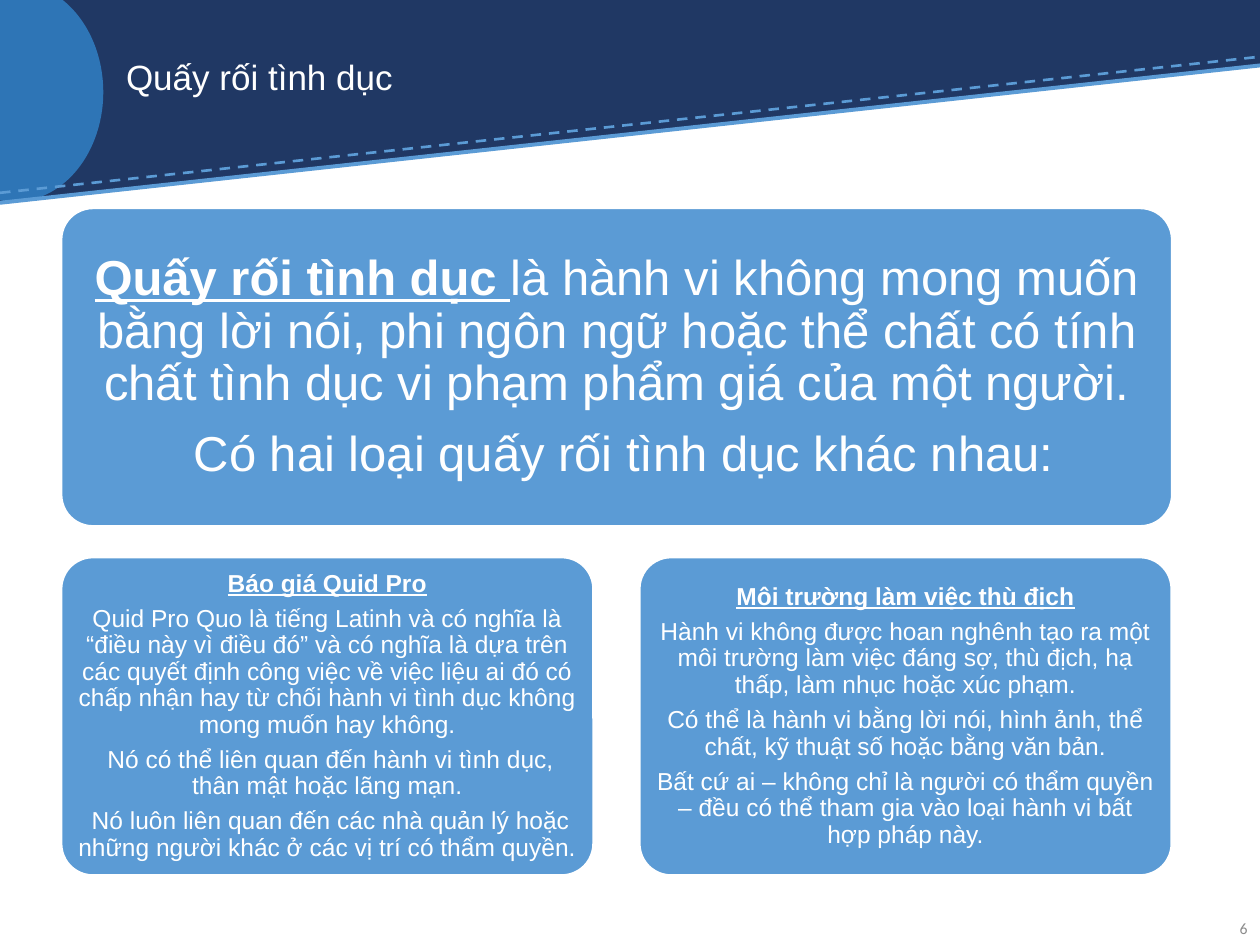
import pptx
import pptx.util
import pptx.dml.color
import pptx.enum.dml
import pptx.enum.shapes
import pptx.enum.text
import pptx.oxml.ns
import lxml.etree

Pt = pptx.util.Pt
RGBColor = pptx.dml.color.RGBColor
SHAPE = pptx.enum.shapes.MSO_SHAPE
ALIGN = pptx.enum.text.PP_ALIGN
MIDDLE = pptx.enum.text.MSO_ANCHOR.MIDDLE
qn = pptx.oxml.ns.qn

NAVY = RGBColor(0x20, 0x38, 0x64)
BLUE = RGBColor(0x2E, 0x75, 0xB6)
SKY = RGBColor(0x5B, 0x9B, 0xD5)
GREY = RGBColor(0x8C, 0x8C, 0x8C)
WHITE = RGBColor(0xFF, 0xFF, 0xFF)


def add_span(para, text, size=14, color=WHITE, font="Arial", heading=False):
    span = para.add_run()
    span.text = text
    span.font.size = Pt(size)
    span.font.name = font
    span.font.color.rgb = color
    span.font.bold = heading
    span.font.underline = heading


def add_filled(page, kind, left, top, width, height, color):
    shape = page.shapes.add_shape(kind, Pt(left), Pt(top), Pt(width), Pt(height))
    shape.shadow.inherit = False
    shape.fill.solid()
    shape.fill.fore_color.rgb = color
    shape.line.fill.background()
    return shape


deck = pptx.Presentation()
deck.slide_width, deck.slide_height = Pt(720), Pt(540)
page = deck.slides.add_slide(deck.slide_layouts[5])

# Header band with its sloping lower edge
add_filled(page, SHAPE.RECTANGLE, 0, 0, 720, 37.4, NAVY)
slope = add_filled(page, SHAPE.RIGHT_TRIANGLE, 0, 37, 720, 78.5, NAVY)
slope.element.spPr.find(qn("a:xfrm")).set("flipV", "1")
add_filled(page, SHAPE.OVAL, -42.5, -10, 101.5, 125.3, BLUE)

# Dashed and solid lines along the slope
for start, end, weight, dash in [
    (110.2, 32.4, 1.5, pptx.enum.dml.MSO_LINE.DASH),
    (115.9, 37.4, 2.25, None),
]:
    line = page.shapes.add_connector(
        pptx.enum.shapes.MSO_CONNECTOR.STRAIGHT, 0, Pt(start), Pt(720), Pt(end))
    line.line.color.rgb = SKY
    line.line.width = Pt(weight)
    line.line.dash_style = dash
    lxml.etree.SubElement(line.element.spPr, qn("a:effectLst"))

# Title, brought in front of the header band
title = page.shapes.title
title.element.getparent().append(title.element)
title.left, title.top, title.width, title.height = Pt(64.8), Pt(14.4), Pt(579.6), Pt(62)
title.text_frame.vertical_anchor = MIDDLE
title.text_frame.word_wrap = True
para = title.text_frame.paragraphs[0]
para.alignment = ALIGN.LEFT
para.line_spacing = 0.9
add_span(para, "Quấy rối tình dục", size=20)

# Slide number
box = page.shapes.add_textbox(Pt(681.8), Pt(516.2), Pt(38.2), Pt(28.8))
box.text_frame.word_wrap = True
box.text_frame.vertical_anchor = MIDDLE
para = box.text_frame.paragraphs[0]
para.alignment = ALIGN.RIGHT
para.space_after = Pt(6)
add_span(para, "6", size=9, color=GREY, font="Calibri")

# Definition on top, the two kinds of harassment below:
# left, top, width, text size, paragraphs of (text, is heading)
CARDS = [
    (34.9, 118.8, 635, 28, [
        [("Quấy rối tình dục ", True),
         ("là hành vi không mong muốn bằng lời nói, phi ngôn ngữ hoặc thể chất "
          "có tính chất tình dục vi phạm phẩm giá của một người.", False)],
        [(" Có hai loại quấy rối tình dục khác nhau:", False)],
    ]),
    (34.9, 318.3, 304.3, 14, [
        [("Báo giá Quid Pro", True)],
        [("Quid Pro Quo là tiếng Latinh và có nghĩa là “điều này vì điều đó” và có "
          "nghĩa là dựa trên các quyết định công việc về việc liệu ai đó có chấp nhận "
          "hay từ chối hành vi tình dục không mong muốn hay không.", False)],
        [(" Nó có thể liên quan đến hành vi tình dục, thân mật hoặc lãng mạn.", False)],
        [(" Nó luôn liên quan đến các nhà quản lý hoặc những người khác ở các vị trí "
          "có thẩm quyền.", False)],
    ]),
    (365.3, 318.3, 304.3, 14, [
        [("Môi trường làm việc thù địch", True)],
        [("Hành vi không được hoan nghênh tạo ra một môi trường làm việc đáng sợ, "
          "thù địch, hạ thấp, làm nhục hoặc xúc phạm.", False)],
        [("Có thể là hành vi bằng lời nói, hình ảnh, thể chất, kỹ thuật số hoặc "
          "bằng văn bản.", False)],
        [("Bất cứ ai – không chỉ là người có thẩm quyền – đều có thể tham gia vào "
          "loại hành vi bất hợp pháp này.", False)],
    ]),
]
for left, top, width, size, paragraphs in CARDS:
    card = add_filled(page, SHAPE.ROUNDED_RECTANGLE, left, top, width, 182, SKY)
    card.adjustments[0] = 0.1
    card.line.color.rgb = WHITE
    card.line.width = Pt(1.5)
    frame = card.text_frame
    frame.word_wrap = True
    frame.vertical_anchor = MIDDLE
    inset = Pt(size * 0.3)
    frame.margin_left = frame.margin_right = inset
    frame.margin_top = frame.margin_bottom = inset
    for index, spans in enumerate(paragraphs):
        para = frame.add_paragraph() if index else frame.paragraphs[0]
        para.alignment = ALIGN.CENTER
        para.line_spacing = 0.9
        para.space_after = Pt(size * 0.35)
        for text, heading in spans:
            add_span(para, text, size=size, heading=heading)

deck.save("out.pptx")
